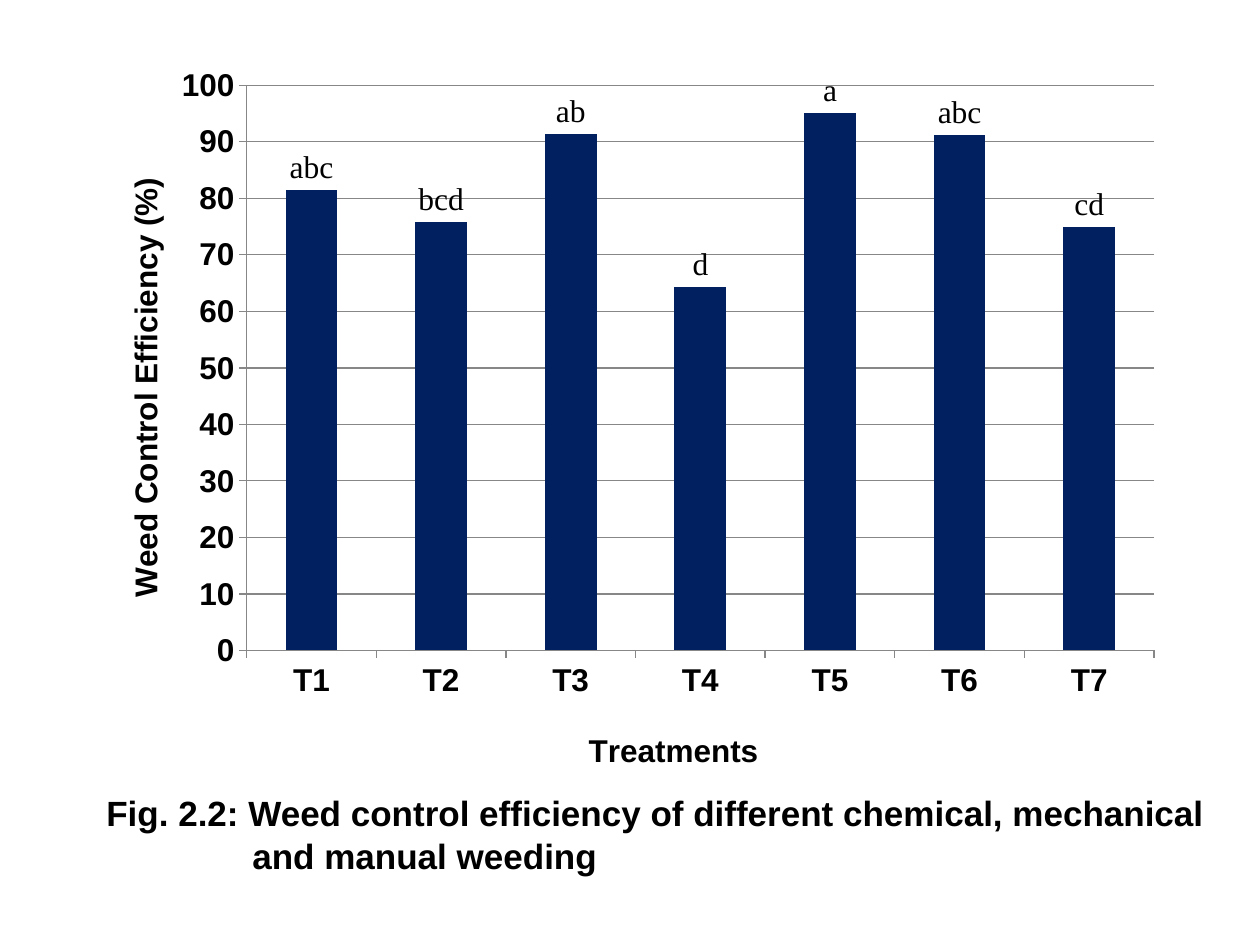
import pptx
import pptx.chart.data
import pptx.dml.color
import pptx.enum.chart
import pptx.enum.text
import pptx.oxml
import pptx.oxml.ns
import pptx.util

COLORS = {"text": "000000", "bar": "002060", "axis": "878787"}
EFFICIENCY = {
    "T1": (81.41, "abc"),
    "T2": (75.73, "bcd"),
    "T3": (91.35, "ab"),
    "T4": (64.29, "d"),
    "T5": (95.11, "a"),
    "T6": (91.12, "abc"),
    "T7": (74.87, "cd"),
}
CAPTION = ("Fig. 2.2: Weed control efficiency of different chemical, mechanical",
           "and manual weeding")
CHART_BOX = (84, 53, 1092, 735)
PLOT_BOX = (247, 85, 907, 565)


def px(length):
    return pptx.util.Emu(round(length * 914400 / 126))


def rgb(name):
    return pptx.dml.color.RGBColor.from_string(COLORS[name])


def set_font(font, size=18, face="Arial", bold=True):
    font.size = pptx.util.Pt(size)
    font.name = face
    font.bold = bold
    font.color.rgb = rgb("text")


def write(paragraph, text, **font_format):
    run = paragraph.add_run()
    run.text = text
    set_font(run.font, **font_format)


def place(element, left, top, width=None, height=None):
    """Fix a chart part at a slide position by a manual layout."""
    for old in element.findall(pptx.oxml.ns.qn("c:layout")):
        element.remove(old)
    chart_left, chart_top, chart_width, chart_height = CHART_BOX
    settings = [("xMode", "edge"), ("yMode", "edge"),
                ("x", round((left - chart_left) / chart_width, 3)),
                ("y", round((top - chart_top) / chart_height, 3))]
    if width:
        settings.insert(0, ("layoutTarget", "inner"))
        settings += [("w", round(width / chart_width, 3)),
                     ("h", round(height / chart_height, 3))]
    parts = "".join(f'<c:{tag} val="{value}"/>' for tag, value in settings)
    layout = pptx.oxml.parse_xml(
        f'<c:layout {pptx.oxml.ns.nsdecls("c")}><c:manualLayout>{parts}'
        "</c:manualLayout></c:layout>")
    title_text = element.find(pptx.oxml.ns.qn("c:tx"))
    if title_text is None:
        element.insert(0, layout)
    else:
        title_text.addnext(layout)


def format_axis(axis, title, left, top):
    write(axis.axis_title.text_frame.paragraphs[0], title)
    place(axis.axis_title._element, left, top)
    set_font(axis.tick_labels.font)
    axis.major_tick_mark = pptx.enum.chart.XL_TICK_MARK.OUTSIDE
    axis.minor_tick_mark = pptx.enum.chart.XL_TICK_MARK.NONE
    axis.format.line.color.rgb = rgb("axis")


def add_efficiency_chart(slide):
    data = pptx.chart.data.CategoryChartData()
    data.categories = list(EFFICIENCY)
    data.add_series("Series 1", [value for value, _ in EFFICIENCY.values()])
    chart = slide.shapes.add_chart(
        pptx.enum.chart.XL_CHART_TYPE.COLUMN_CLUSTERED,
        *map(px, CHART_BOX), data).chart
    chart.has_legend = False
    chart.has_title = False
    set_font(chart.font, face="Times New Roman", bold=False)
    place(chart._chartSpace.chart.plotArea, *PLOT_BOX)

    format_axis(chart.category_axis, "Treatments", 583, 724)
    efficiency_axis = chart.value_axis
    format_axis(efficiency_axis, "Weed Control Efficiency (%)", 119, 172)
    efficiency_axis.minimum_scale = 0
    efficiency_axis.maximum_scale = 100
    efficiency_axis.major_unit = 10
    efficiency_axis.has_major_gridlines = True
    efficiency_axis.major_gridlines.format.line.color.rgb = rgb("axis")

    bars = chart.plots[0]
    bars.gap_width = 150
    bars.vary_by_categories = False
    series = bars.series[0]
    series.format.fill.solid()
    series.format.fill.fore_color.rgb = rgb("bar")
    outside_end = pptx.enum.chart.XL_LABEL_POSITION.OUTSIDE_END
    series.data_labels.show_value = True
    series.data_labels.position = outside_end
    for index, (_, group) in enumerate(EFFICIENCY.values()):
        label = series.points[index].data_label
        write(label.text_frame.paragraphs[0], group,
              face="Times New Roman", bold=False)
        label.position = outside_end


def add_caption(slide):
    frame = slide.shapes.add_textbox(*map(px, (94, 766, 1134, 136))).text_frame
    frame.word_wrap = True
    frame.vertical_anchor = pptx.enum.text.MSO_ANCHOR.MIDDLE
    first, second = frame.paragraphs[0], frame.add_paragraph()
    write(first, CAPTION[0], size=20)
    write(second, CAPTION[1], size=20)
    second._p.get_or_add_pPr().set("marL", str(px(146)))


def main():
    presentation = pptx.Presentation()
    presentation.slide_width = px(1260)
    presentation.slide_height = px(945)
    slide = presentation.slides.add_slide(presentation.slide_layouts[6])
    add_efficiency_chart(slide)
    add_caption(slide)
    presentation.save("out.pptx")


if __name__ == "__main__":
    main()
